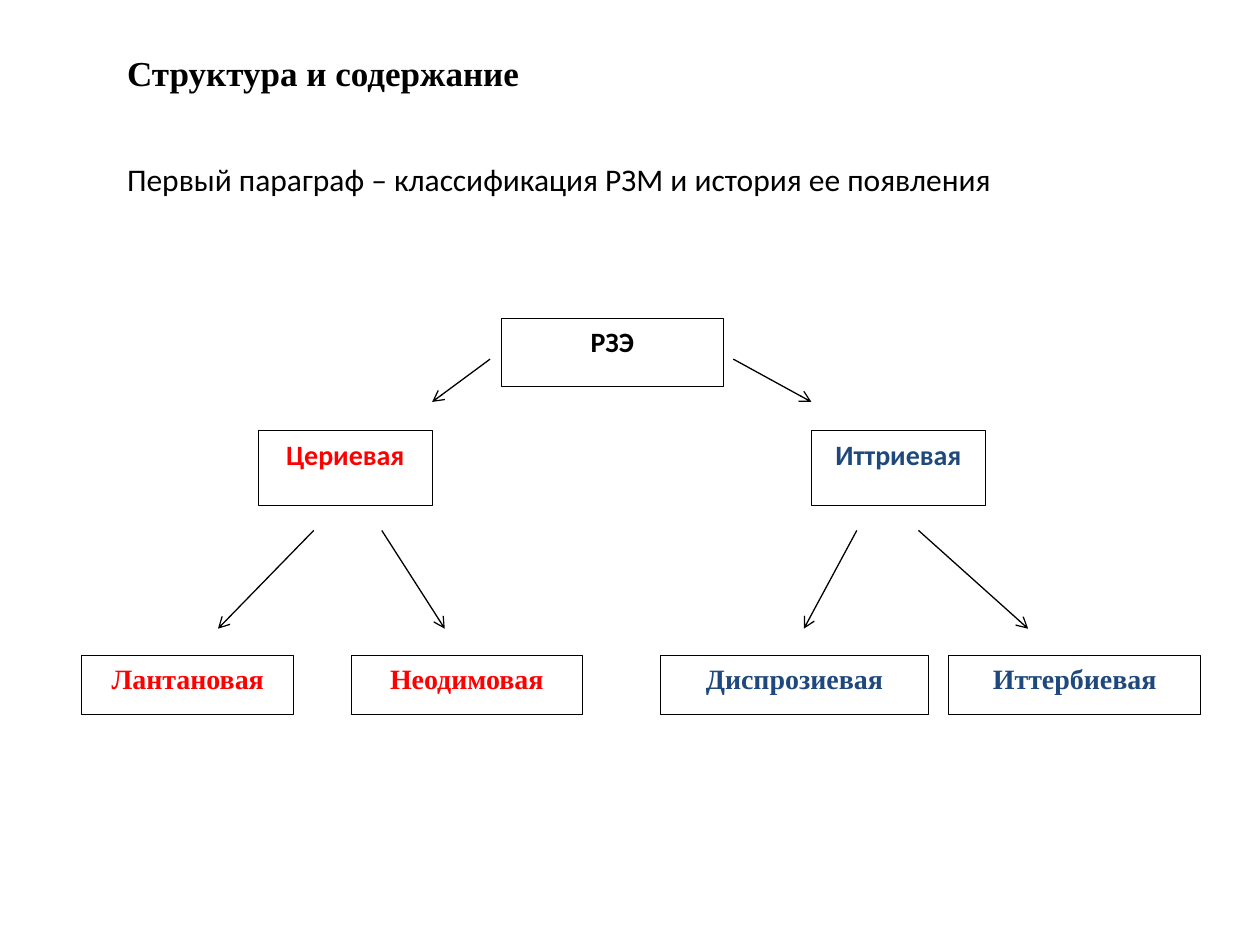
from lxml import etree
from pptx import Presentation
from pptx.dml.color import RGBColor
from pptx.enum import shapes, text
from pptx.oxml.ns import qn
from pptx.util import Inches, Pt

COLORS = {"black": "000000", "white": "FFFFFF", "cerium": "FF0000", "yttrium": "1F497D"}
SANS, SERIF = "Calibri", "Times New Roman"

HEADINGS = [
    ("Структура и содержание", 0.36, 5.98, 0.44, SERIF, 20, True),
    ("Первый параграф – классификация РЗМ и история ее появления", 1.22, 8.82, 0.4, SANS, 18, False),
]
HEADING_LEFT = 0.91

LEVELS = [
    {"top": 2.53, "height": 0.54, "font": SANS, "boxes": [("РЗЭ", 3.98, 1.76, "black")]},
    {"top": 3.42, "height": 0.59, "font": SANS, "boxes": [
        ("Цериевая", 2.05, 1.38, "cerium"),
        ("Иттриевая", 6.44, 1.38, "yttrium"),
    ]},
    {"top": 5.2, "height": 0.47, "font": SERIF, "boxes": [
        ("Лантановая", 0.65, 1.68, "cerium"),
        ("Неодимовая", 2.79, 1.83, "cerium"),
        ("Диспрозиевая", 5.24, 2.13, "yttrium"),
        ("Иттербиевая", 7.53, 2.0, "yttrium"),
    ]},
]

ARROW_ROWS = [
    (2.85, 3.19, [(3.89, 3.43), (5.82, 6.44)]),
    (4.21, 4.99, [(2.49, 1.73), (3.03, 3.53), (6.8, 6.38), (7.29, 8.16)]),
]


def rgb(name):
    return RGBColor.from_string(COLORS[name])


def write(shape, words, font_name, size, bold, color, alignment):
    frame = shape.text_frame
    frame.word_wrap = True
    frame.vertical_anchor = text.MSO_ANCHOR.TOP
    paragraph = frame.paragraphs[0]
    paragraph.text = words
    paragraph.alignment = alignment
    font = paragraph.font
    font.name, font.size, font.bold = font_name, Pt(size), bold
    font.color.rgb = rgb(color)


def add_heading(slide, words, top, width, height, font_name, size, bold):
    box = slide.shapes.add_textbox(Inches(HEADING_LEFT), Inches(top), Inches(width), Inches(height))
    write(box, words, font_name, size, bold, "black", text.PP_ALIGN.LEFT)


def add_box(slide, level, words, left, width, color):
    box = slide.shapes.add_shape(
        shapes.MSO_SHAPE.RECTANGLE,
        Inches(left), Inches(level["top"]), Inches(width), Inches(level["height"]),
    )
    box.shadow.inherit = False
    box.fill.solid()
    box.fill.fore_color.rgb = rgb("white")
    box.line.color.rgb = rgb("black")
    box.line.width = Pt(0.5)
    write(box, words, level["font"], 16, True, color, text.PP_ALIGN.CENTER)


def add_arrow(slide, start_x, start_y, end_x, end_y):
    arrow = slide.shapes.add_connector(
        shapes.MSO_CONNECTOR.STRAIGHT,
        Inches(start_x), Inches(start_y), Inches(end_x), Inches(end_y),
    )
    arrow.line.color.rgb = rgb("black")
    arrow.line.width = Pt(0.75)
    etree.SubElement(arrow.line._get_or_add_ln(), qn("a:tailEnd"), type="arrow")
    etree.SubElement(arrow._element.spPr, qn("a:effectLst"))


def main():
    presentation = Presentation()
    presentation.slide_width, presentation.slide_height = Inches(10), Inches(7.5)
    slide = presentation.slides.add_slide(presentation.slide_layouts[6])
    for heading in HEADINGS:
        add_heading(slide, *heading)
    for level in LEVELS:
        for box in level["boxes"]:
            add_box(slide, level, *box)
    for start_y, end_y, spans in ARROW_ROWS:
        for start_x, end_x in spans:
            add_arrow(slide, start_x, start_y, end_x, end_y)
    presentation.save("out.pptx")


if __name__ == "__main__":
    main()
